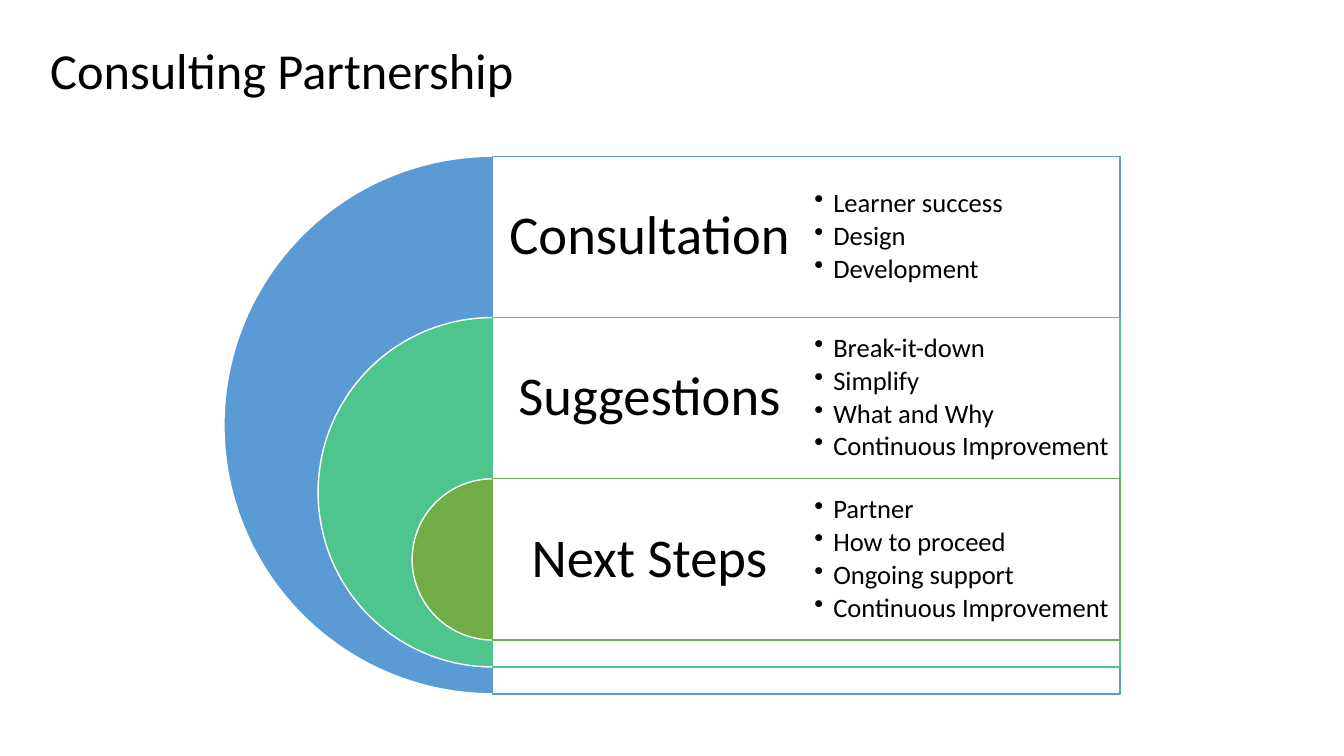
import pptx
import pptx.util
import pptx.dml.color
import pptx.enum.shapes
import pptx.enum.text
import pptx.oxml.ns
from lxml import etree

Pt = pptx.util.Pt
RGBColor = pptx.dml.color.RGBColor
MSO_SHAPE = pptx.enum.shapes.MSO_SHAPE
PP_ALIGN = pptx.enum.text.PP_ALIGN
qn = pptx.oxml.ns.qn

BLACK = RGBColor(0x00, 0x00, 0x00)
WHITE = RGBColor(0xFF, 0xFF, 0xFF)
BLUE = RGBColor(0x5B, 0x9B, 0xD5)
TEAL = RGBColor(0x4D, 0xC5, 0x8D)
GREEN = RGBColor(0x70, 0xAD, 0x47)

STAGES = [
    ("Consultation", BLUE, ["Learner success", "Design", "Development"]),
    ("Suggestions", TEAL, ["Break-it-down", "Simplify", "What and Why",
                           "Continuous Improvement"]),
    ("Next Steps", GREEN, ["Partner", "How to proceed", "Ongoing support",
                           "Continuous Improvement"]),
]

# Layout in points
AXIS_X, TOP = 352, 111.6
OUTER, ROW_H = 384, 115.2
COL_W = 224


def write(tf, lines, size, align=PP_ALIGN.LEFT, after=0, bullet=False):
    """Fill a text frame with one paragraph per line."""
    for i, line in enumerate(lines):
        p = tf.paragraphs[0] if i == 0 else tf.add_paragraph()
        p.alignment, p.line_spacing, p.space_after = align, 0.9, Pt(after)
        r = p.add_run()
        r.text = line
        r.font.name, r.font.size = "Calibri", Pt(size)
        r.font.color.rgb = BLACK
        if bullet:
            p.level = 1
            pPr = p._p.get_or_add_pPr()
            pPr.set("marL", str(Pt(13.5)))
            pPr.set("indent", str(Pt(-13.5)))
            etree.SubElement(pPr, qn("a:buChar")).set("char", "•")


class Deck:
    def __init__(self, width, height):
        self.prs = pptx.Presentation()
        self.prs.slide_width, self.prs.slide_height = Pt(width), Pt(height)
        self.s = self.prs.slides.add_slide(self.prs.slide_layouts[6])

    def shape(self, kind, x, y, w, h, fill, line):
        sp = self.s.shapes.add_shape(kind, Pt(x), Pt(y), Pt(w), Pt(h))
        sp.shadow.inherit = False
        sp.fill.solid()
        sp.fill.fore_color.rgb = fill
        sp.line.color.rgb = line
        sp.line.width = Pt(1)
        return sp

    def half_disc(self, center_x, y, diameter, fill):
        sp = self.shape(MSO_SHAPE.PIE, center_x - diameter / 2, y,
                        diameter, diameter, fill, WHITE)
        sp.adjustments[0], sp.adjustments[1] = 54, 162

    def panel(self, x, y, w, h, line):
        sp = self.shape(MSO_SHAPE.RECTANGLE, x, y, w, h, WHITE, line)
        color = sp._element.spPr.find(qn("a:solidFill"))[0]
        etree.SubElement(color, qn("a:alpha")).set("val", "90000")

    def text(self, x, y, w, h, lines, size, inset, **fmt):
        tf = self.s.shapes.add_textbox(Pt(x), Pt(y), Pt(w), Pt(h)).text_frame
        tf.word_wrap = True
        tf.vertical_anchor = pptx.enum.text.MSO_ANCHOR.MIDDLE
        tf.margin_left = tf.margin_right = Pt(inset)
        tf.margin_top = tf.margin_bottom = Pt(inset)
        write(tf, lines, size, **fmt)


def main():
    deck = Deck(960, 540)

    # Nested stages, each one row lower and 35% of the outer size smaller
    for i, (name, color, points) in enumerate(STAGES):
        y = TOP + i * ROW_H
        size = OUTER * (1 - 0.35 * i)
        deck.half_disc(AXIS_X, y, size, color)
        deck.panel(AXIS_X, y, 2 * COL_W, size, color)
        deck.text(AXIS_X, y, COL_W, ROW_H, [name], 39, 11.5,
                  align=PP_ALIGN.CENTER, after=13.65)
        deck.text(AXIS_X + COL_W, y, COL_W, ROW_H, points, 19, 5.75,
                  after=2.85, bullet=True)

    # Title
    deck.text(28.8, 0, 828, 104.4, ["Consulting Partnership"], 36, 7.2)

    deck.prs.save("out.pptx")


if __name__ == "__main__":
    main()
